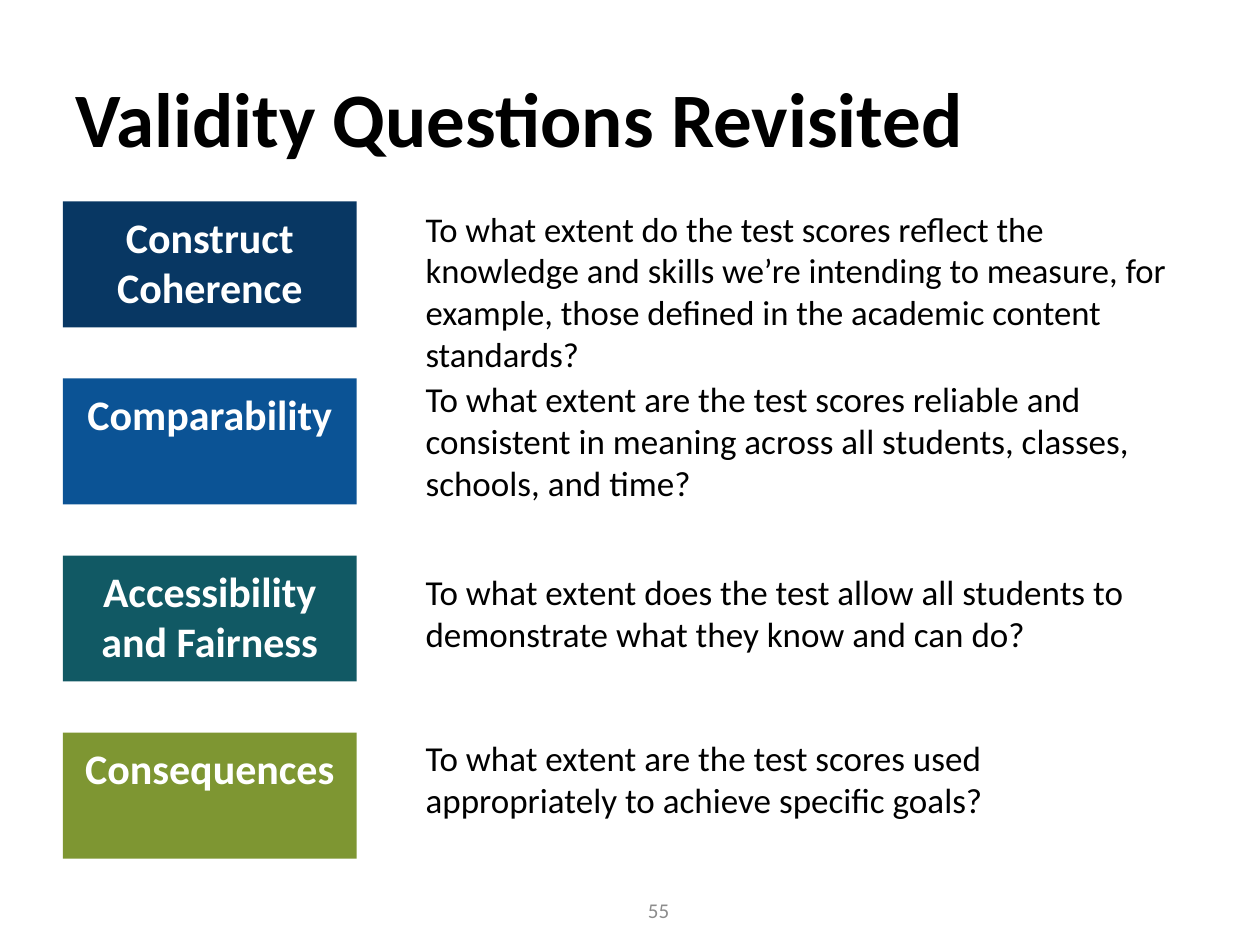
from dataclasses import dataclass

from pptx import Presentation
from pptx.dml.color import RGBColor
from pptx.enum import shapes, text
from pptx.util import Cm, Pt


@dataclass(frozen=True)
class Theme:
    font: str = "Calibri"
    ink: str = "000000"
    pale: str = "FFFFFF"
    grey: str = "8C8C8C"
    title: float = 44
    label: float = 24
    body: float = 20
    tight: float = 19.8
    note: float = 12


THEME = Theme()
LEFT, TOP, PITCH = 1.27, 4.06, 3.57

# label, fill, question, question's drop from the row top, width, height, size
ROWS = [
    ("Construct Coherence", "083763",
     "To what extent do the test scores reflect the knowledge and skills "
     "we’re intending to measure, for example, those defined in the "
     "academic content standards?", 0, 15.44, 3.15, THEME.tight),
    ("Comparability", "0B5395",
     "To what extent are the test scores reliable and consistent in meaning "
     "across all students, classes, schools, and time?",
     -0.15, 15.8, 2.54, THEME.body),
    ("Accessibility and Fairness", "115964",
     "To what extent does the test allow all students to demonstrate what "
     "they know and can do?", 0.18, 16.08, 2.54, THEME.body),
    ("Consequences", "7E9632",
     "To what extent are the test scores used appropriately to achieve "
     "specific goals?", -0.05, 14.12, 2.54, THEME.body),
]


def write(shape, words, size, color=THEME.ink, bold=False,
          align=text.PP_ALIGN.LEFT, anchor=text.MSO_ANCHOR.TOP):
    frame = shape.text_frame
    frame.word_wrap = True
    frame.vertical_anchor = anchor
    para = frame.paragraphs[0]
    para.alignment = align
    run = para.add_run()
    run.text = words
    font = run.font
    font.name, font.size, font.bold = THEME.font, Pt(size), bold
    font.color.rgb = RGBColor.from_string(color)


def add_box(slide, box):
    return slide.shapes.add_textbox(*map(Cm, box))


def add_title(slide, box):
    write(add_box(slide, box), "Validity Questions Revisited", THEME.title,
          bold=True, anchor=text.MSO_ANCHOR.MIDDLE)


def add_label(slide, box, words, fill):
    tile = slide.shapes.add_shape(shapes.MSO_SHAPE.RECTANGLE, *map(Cm, box))
    tile.shadow.inherit = False
    tile.fill.solid()
    tile.fill.fore_color.rgb = RGBColor.from_string(fill)
    tile.line.fill.background()
    tile.text_frame.margin_top = Cm(0.2)
    write(tile, words, THEME.label, THEME.pale, True, text.PP_ALIGN.CENTER)


def add_row(slide, left, top, row):
    """Place a coloured label with its question to the right."""
    label, fill, question, drop, width, height, size = row
    add_label(slide, (left, top, 5.92, 2.54), label, fill)
    area = add_box(slide, (left + 7.06, top + drop, width, height))
    write(area, question, size)


def add_number(slide, box):
    write(add_box(slide, box), "55", THEME.note, THEME.grey,
          align=text.PP_ALIGN.RIGHT, anchor=text.MSO_ANCHOR.MIDDLE)


def main():
    deck = Presentation()
    deck.slide_width, deck.slide_height = Cm(25.4), Cm(19.05)
    slide = deck.slides.add_slide(deck.slide_layouts[6])
    add_title(slide, (LEFT, 0.76, 22.86, 3.18))
    for i, row in enumerate(ROWS):
        add_row(slide, LEFT, TOP + i * PITCH, row)
    add_number(slide, (7.82, 17.83, 5.92, 1.02))
    deck.save("out.pptx")


if __name__ == "__main__":
    main()
